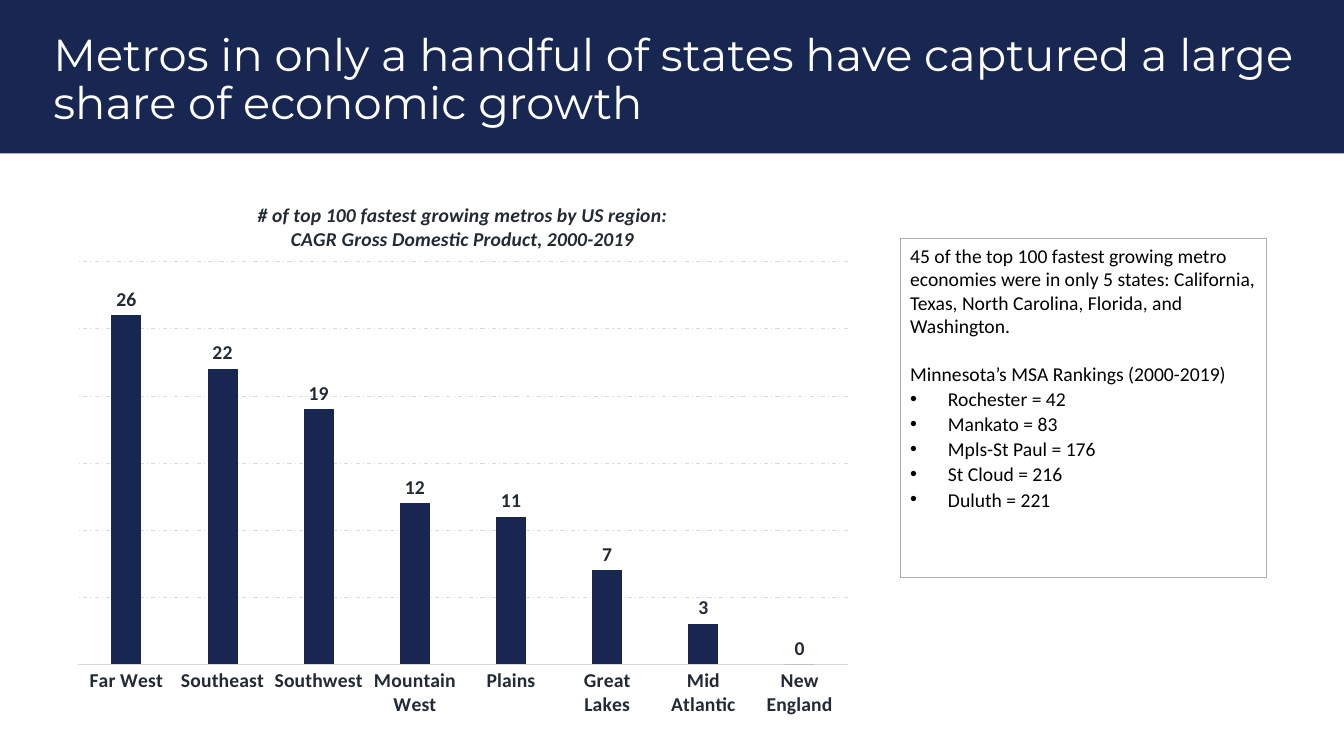
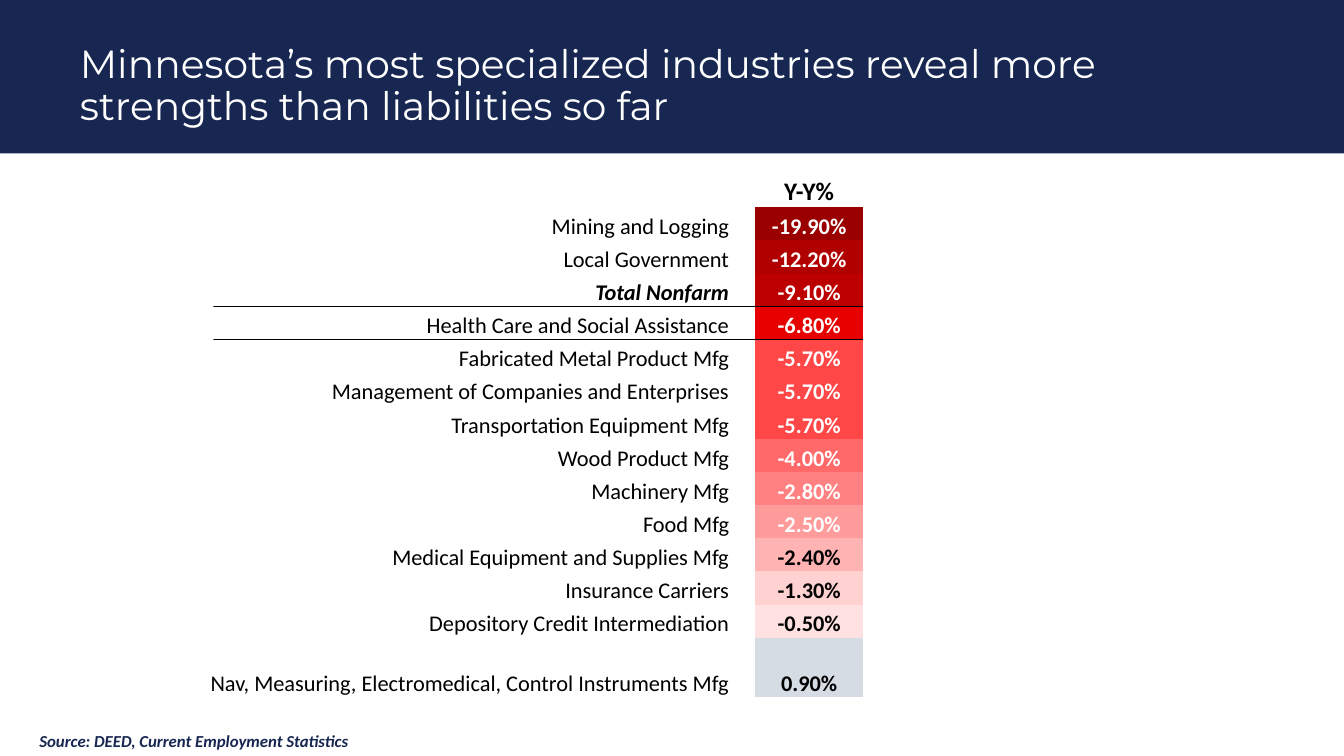
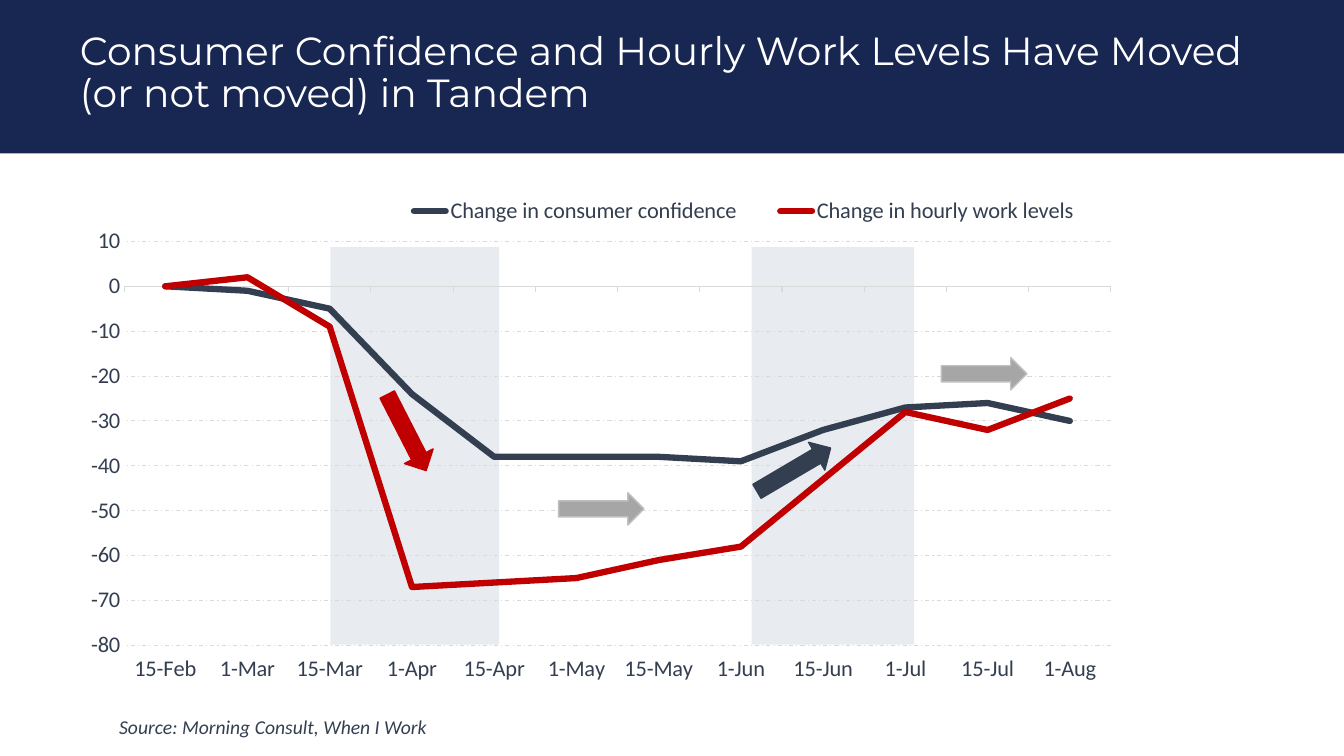
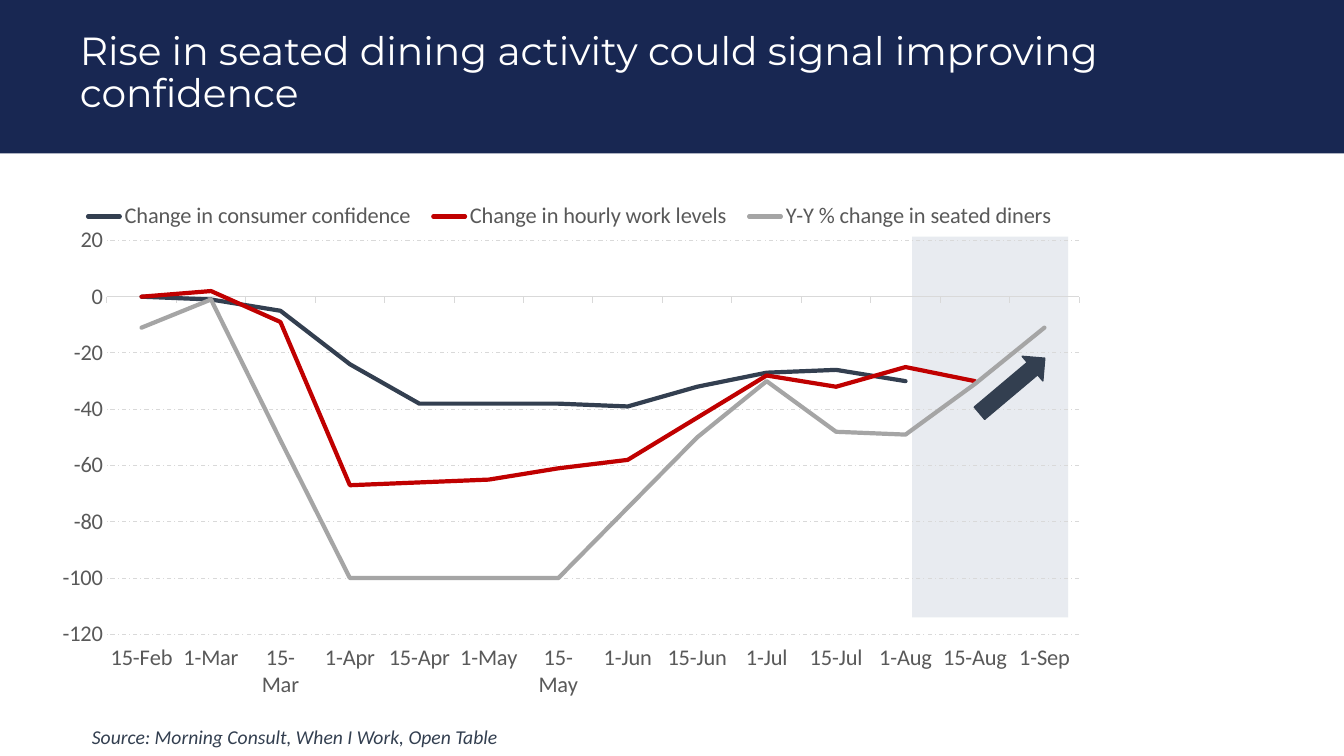
from lxml.etree import SubElement as Sub
from pptx import Presentation
from pptx.chart.data import CategoryChartData as Data
from pptx.dml.color import RGBColor as Rgb
from pptx.enum.chart import XL_CHART_TYPE as Kind
from pptx.enum.chart import XL_LABEL_POSITION as Spot
from pptx.enum.chart import XL_LEGEND_POSITION as Side
from pptx.enum.chart import XL_TICK_LABEL_POSITION as Place
from pptx.enum.chart import XL_TICK_MARK as Tick
from pptx.enum.dml import MSO_LINE as Dash
from pptx.enum.shapes import MSO_SHAPE as Form
from pptx.enum.text import MSO_ANCHOR as Anchor
from pptx.enum.text import PP_ALIGN as Align
from pptx.oxml.ns import qn
from pptx.util import Pt

HUE = {
    "navy": "182752", "slate": "333F50", "ink": "222A35", "text": "595959",
    "red": "C00000", "gray": "A6A6A6", "dust": "A5A5A5", "edge": "BFBFBF",
    "grid": "D9D9D9", "frame": "AFABAB", "mist": "D6DCE5", "pale": "D6DCE4",
    "white": "FFFFFF", "black": "000000",
}
BODY, HEAD = "Calibri", "Montserrat"
NO_STYLE = "{2D5ABB26-0587-4C30-8999-92F81FD0307C}"

DATES = ["15-Feb", "1-Mar", "15-Mar", "1-Apr", "15-Apr", "1-May", "15-May",
         "1-Jun", "15-Jun", "1-Jul", "15-Jul", "1-Aug", "15-Aug", "1-Sep"]
MOOD = [0, -1, -5, -24, -38, -38, -38, -39, -32, -27, -26, -30]
WORK = [0, 2, -9, -67, -66, -65, -61, -58, -43, -28, -32, -25]
MEALS = [-11, -1, -51, -100, -100, -100, -100, -75, -50, -30, -48, -49,
         -31, -11]

REGIONS = {"Far West": 26, "Southeast": 22, "Southwest": 19,
           "Mountain West": 12, "Plains": 11, "Great Lakes": 7,
           "Mid Atlantic": 3, "New England": 0}
METROS = {"Rochester": 42, "Mankato": 83, "Mpls-St Paul": 176,
          "St Cloud": 216, "Duluth": 221}

TRADES = [
    ("Mining and Logging", "-19.90%", "9A0000"),
    ("Local Government", "-12.20%", "B00000"),
    ("Total Nonfarm", "-9.10%", "BC0000"),
    ("Health Care and Social Assistance", "-6.80%", "E60000"),
    ("Fabricated Metal Product Mfg", "-5.70%", "FF4747"),
    ("Management of Companies and Enterprises", "-5.70%", "FF4747"),
    ("Transportation Equipment Mfg", "-5.70%", "FF4747"),
    ("Wood Product Mfg", "-4.00%", "FF6969"),
    ("Machinery Mfg", "-2.80%", "FF8181"),
    ("Food Mfg", "-2.50%", "FF9B9B"),
    ("Medical Equipment and Supplies Mfg", "-2.40%", "FFB3B3"),
    ("Insurance Carriers", "-1.30%", "FFD1D1"),
    ("Depository Credit Intermediation", "-0.50%", "FFE1E1"),
    ("Nav, Measuring, Electromedical, Control Instruments Mfg", "0.90%",
     HUE["pale"]),
]
TOTAL = "Total Nonfarm"
LIGHT_ROWS = 10


def rgb(name):
    return Rgb.from_string(HUE.get(name, name))


def pts(box):
    return [Pt(n) for n in box]


def style(font, size, hue, bold=False, slant=False, face=BODY):
    font.size, font.name = Pt(size), face
    font.bold, font.italic = bold, slant
    font.color.rgb = rgb(hue)


def write(frame, text, *look, **more):
    """Set one paragraph of text in a frame and style its run."""
    frame.text = text
    para = frame.paragraphs[0]
    style(para.runs[0].font, *look, **more)
    return para


def block(slide, box, fill=None, line=None, width=1, form=Form.RECTANGLE,
          alpha=None, turn=0):
    shape = slide.shapes.add_shape(form, *pts(box))
    shape.shadow.inherit = False
    shape.rotation = turn
    if fill:
        shape.fill.solid()
        shape.fill.fore_color.rgb = rgb(fill)
    else:
        shape.fill.background()
    if line:
        shape.line.color.rgb = rgb(line)
        shape.line.width = Pt(width)
    else:
        shape.line.fill.background()
    if alpha:
        tone = shape.fill._xPr.find(".//" + qn("a:srgbClr"))
        Sub(tone, qn("a:alpha")).set("val", str(alpha * 1000))
    return shape


def shade(slide, box):
    block(slide, box, "mist", alpha=55)


def arrow(slide, left, top, fill, line, turn=0):
    block(slide, (left, top, 61, 23), fill, line, form=Form.RIGHT_ARROW,
          turn=turn)


def label(slide, box, text, *look, **more):
    frame = slide.shapes.add_textbox(*pts(box)).text_frame
    frame.word_wrap = True
    write(frame, text, *look, **more)
    return frame


def start(deck, title, box, size=28):
    """Add a slide with the title band."""
    slide = deck.slides.add_slide(deck.slide_layouts[6])
    block(slide, (0, 0, 960, 109.5), "navy")
    frame = label(slide, box, title, size, "white", face=HEAD)
    frame.vertical_anchor = Anchor.MIDDLE
    frame.paragraphs[0].line_spacing = 0.9
    return slide


def layout(part, index, inner=False, **sides):
    """Place a chart part by fractions of the chart's size."""
    old = part.find(qn("c:layout"))
    if old is not None:
        part.remove(old)
    node = part.makeelement(qn("c:layout"), {})
    part.insert(index, node)
    spot = Sub(node, qn("c:manualLayout"))
    rules = [("layoutTarget", "inner")] if inner else []
    rules += [("xMode", "edge"), ("yMode", "edge"), *sides.items()]
    for tag, val in rules:
        Sub(spot, qn("c:" + tag)).set("val", str(val))


def chart_on(slide, kind, box, cats, rows, plot, size, hue, bold=False):
    """Add a clear chart with the shared axes and grid."""
    data = Data()
    data.categories = cats
    for name, vals in rows:
        data.add_series(name, vals)
    chart = slide.shapes.add_chart(kind, *pts(box), data).chart
    style(chart.font, size, hue, bold)
    chart.has_legend = chart.has_title = False
    chart.plots[0].vary_by_categories = False

    root = chart._chartSpace.find(qn("c:chart"))
    area = root.find(qn("c:plotArea"))
    layout(area, 0, True, **plot)
    clear = root.makeelement(qn("c:spPr"), {})
    root.addnext(clear)
    for node in (clear, Sub(area, qn("c:spPr"))):
        Sub(node, qn("a:noFill"))
        Sub(Sub(node, qn("a:ln")), qn("a:noFill"))

    cat, val = chart.category_axis, chart.value_axis
    for axis in (cat, val):
        style(axis.tick_labels.font, size, hue, bold)
        axis.major_tick_mark = axis.minor_tick_mark = Tick.NONE
    grid = val.major_gridlines.format.line
    for line in (cat.format.line, grid):
        line.color.rgb = rgb("grid")
        line.width = Pt(0.75)
    grid.dash_style = Dash.DASH_DOT
    val.format.line.fill.background()
    return chart


def scale(axis, low, high, step):
    axis.minimum_scale, axis.maximum_scale = low, high
    axis.major_unit = step


def bars(slide, box):
    chart = chart_on(slide, Kind.COLUMN_CLUSTERED, box, list(REGIONS),
                     [("Series 1", list(REGIONS.values()))],
                     dict(x=0.02, y=0.155, w=0.96, h=0.73), 14, "ink", True)
    chart.has_title = True
    frame = chart.chart_title.text_frame
    frame.text = ("# of top 100 fastest growing metros by US region:\n"
                  "CAGR Gross Domestic Product, 2000-2019")
    for para in frame.paragraphs:
        style(para.runs[0].font, 14, "ink", True, True)
    layout(chart.chart_title._element, 1, x=0.24, y=0.04)

    scale(chart.value_axis, 0, 30, 5)
    chart.value_axis.visible = False
    plot = chart.plots[0]
    plot.gap_width, plot.overlap = 219, -27
    fill = plot.series[0].format.fill
    fill.solid()
    fill.fore_color.rgb = rgb("navy")
    plot.has_data_labels = True
    tags = plot.data_labels
    tags.show_value, tags.position = True, Spot.OUTSIDE_END
    style(tags.font, 14, "ink", True)


def lines(slide, box, cats, rows, plot, key, span, hue, width):
    """Add a line chart; each row is a name, values and a colour."""
    chart = chart_on(slide, Kind.LINE, box, cats, [r[:2] for r in rows],
                     plot, 16, hue)
    scale(chart.value_axis, *span)
    chart.category_axis.major_tick_mark = Tick.OUTSIDE
    chart.category_axis.tick_label_position = Place.LOW
    chart.has_legend = True
    chart.legend.position = Side.TOP
    chart.legend.include_in_layout = False
    style(chart.legend.font, 16, hue)
    layout(chart.legend._element, 1, **key)
    for row, tone in zip(chart.plots[0].series, (r[2] for r in rows)):
        row.smooth = False
        row.format.line.color.rgb = rgb(tone)
        row.format.line.width = Pt(width)
        row._element.find(qn("c:spPr")).find(qn("a:ln")).set("cap", "rnd")


def ranks(slide, box):
    shape = block(slide, box, line="frame", width=0.75)
    frame = shape.text_frame
    frame.word_wrap = True
    frame.vertical_anchor = Anchor.TOP
    frame.text = "\n".join([
        "45 of the top 100 fastest growing metro economies were in only 5 "
        "states: California, Texas, North Carolina, Florida, and Washington.",
        "Minnesota’s MSA Rankings (2000-2019)",
        *(f"{name} = {rank}" for name, rank in METROS.items())])
    for num, para in enumerate(frame.paragraphs):
        para.alignment = Align.LEFT
        if num == 1:
            para.space_before = Pt(17)
        if num > 1:
            para.line_spacing = 1.07
            props = para._p.get_or_add_pPr()
            props.set("marL", str(Pt(27)))
            props.set("indent", str(-Pt(27)))
            Sub(props, qn("a:buFont")).set("typeface", "Arial")
            Sub(props, qn("a:buChar")).set("char", "•")
        style(para.runs[0].font, 14, "black")


def rule(cell, side):
    """Draw a thin black border on one side of a cell."""
    props = cell._tc.get_or_add_tcPr()
    line = props.makeelement(qn("a:ln" + side), {"w": str(Pt(0.5))})
    props.insert(0, line)
    Sub(Sub(line, qn("a:solidFill")), qn("a:srgbClr")).set(
        "val", HUE["black"])


def trades(slide, left, top):
    widths = (481.5, 18, 77)
    heights = [23.65] * len(TRADES) + [42.5]
    box = (left, top, sum(widths), sum(heights))
    table = slide.shapes.add_table(len(heights), 3, *pts(box)).table
    table.first_row = table.horz_banding = False
    table._tbl.tblPr.find(qn("a:tableStyleId")).text = NO_STYLE
    for col, width in zip(table.columns, widths):
        col.width = Pt(width)
    for row, height in zip(table.rows, heights):
        row.height = Pt(height)
    for cell in table.iter_cells():
        cell.margin_left = cell.margin_right = cell.margin_top = Pt(0.72)
        cell.margin_bottom = 0
        cell.vertical_anchor = Anchor.BOTTOM
        cell.fill.background()

    write(table.cell(0, 2).text_frame, "Y-Y%", 18, "black",
          True).alignment = Align.CENTER
    for num, (name, change, fill) in enumerate(TRADES, 1):
        total = name == TOTAL
        write(table.cell(num, 0).text_frame, name, 16, "black", total,
              total).alignment = Align.RIGHT
        cell = table.cell(num, 2)
        hue = "white" if num <= LIGHT_ROWS else "black"
        write(cell.text_frame, change, 16, hue,
              True).alignment = Align.CENTER
        cell.fill.solid()
        cell.fill.fore_color.rgb = rgb(fill)
        if total:
            for col in range(3):
                rule(table.cell(num, col), "B")
                rule(table.cell(num + 1, col), "T")


def growth(deck):
    slide = start(deck, "Metros in only a handful of states have captured "
                  "a large share of economic growth", (31, 17, 911, 82), 32)
    ranks(slide, (643, 170.5, 262, 242))
    bars(slide, (44.5, 126, 572.5, 394))


def jobs(deck):
    slide = start(deck, "Minnesota’s most specialized industries reveal more "
                  "strengths than liabilities so far", (50, 29, 844, 65.5))
    label(slide, (21, 518.5, 348, 21.5),
          "Source: DEED, Current Employment Statistics", 12, "navy", True,
          True)
    trades(slide, 40, 124.5)
    block(slide, (0, 185, 152.5, 105), "white")


def tandem(deck):
    slide = start(deck, "Consumer Confidence and Hourly Work Levels Have "
                  "Moved (or not moved) in Tandem", (50, 20, 886, 65.5))
    shade(slide, (236, 176.5, 120.5, 284))
    shade(slide, (537, 176.5, 116, 284))
    lines(slide, (50, 124, 758, 370), DATES[:len(MOOD)],
          [("Change in consumer confidence", MOOD, "slate"),
           ("Change in hourly work levels", WORK, "red")],
          dict(x=0.051, y=0.131, w=0.93, h=0.78),
          dict(x=0.29, y=0.035, w=0.69, h=0.075),
          (-80, 10, 10), "slate", 4.5)
    label(slide, (78, 507, 248, 24.5),
          "Source: Morning Consult, When I Work", 14, "slate", slant=True)
    arrow(slide, 260, 297.5, "red", "red", 62.9)
    arrow(slide, 536.5, 324, "slate", "slate", 329.5)
    arrow(slide, 399, 352, "gray", "edge")
    arrow(slide, 672.5, 255.5, "gray", "edge")


def dining(deck):
    slide = start(deck, "Rise in seated dining activity could signal "
                  "improving confidence", (50, 20, 886, 65.5))
    shade(slide, (651.5, 169, 111.5, 272))
    lines(slide, (29.5, 123, 755, 384), DATES,
          [("Change in consumer confidence", MOOD + [None] * 2, "slate"),
           ("Change in hourly work levels", WORK + [-30, None], "red"),
           ("Y-Y % change in seated diners", MEALS, "dust")],
          dict(x=0.062, y=0.127, w=0.92, h=0.733),
          dict(x=0.03, y=0.045, w=0.94, h=0.075),
          (-120, 20, 20), "text", 3)
    label(slide, (58.5, 514, 367, 24.5),
          "Source: Morning Consult, When I Work, Open Table", 14, "slate",
          slant=True)
    arrow(slide, 692.5, 264, "slate", "slate", 319.9)


def main():
    deck = Presentation()
    deck.slide_width, deck.slide_height = Pt(960), Pt(540)
    for make in (growth, jobs, tandem, dining):
        make(deck)
    deck.save("out.pptx")


if __name__ == "__main__":
    main()
